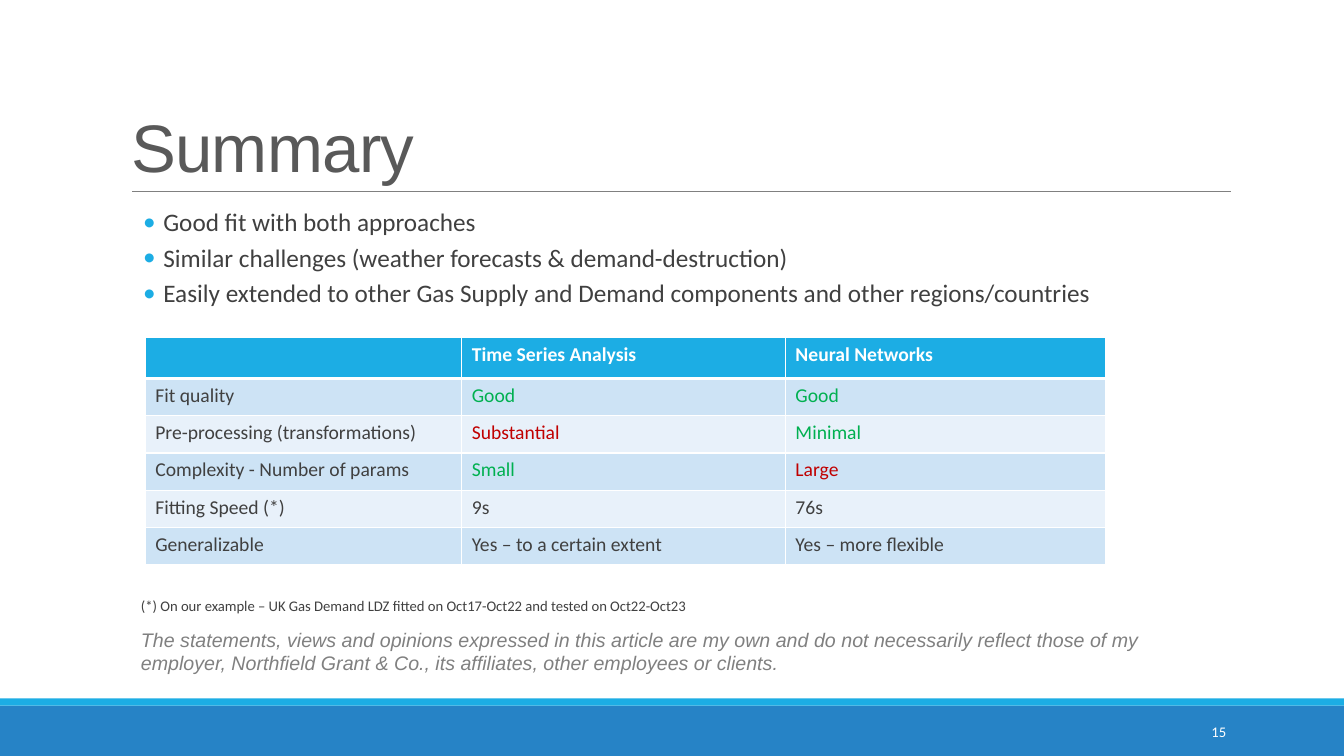
from lxml import etree
from pptx import Presentation
from pptx import util as u
from pptx.dml.color import RGBColor
from pptx.enum import shapes, text
from pptx.oxml.ns import qn

HUES = {
    "white": "FFFFFF", "sky": "1CADE4", "blue": "2683C6", "rule": "808080",
    "title": "595959", "ink": "404040", "good": "00B050", "bad": "C00000",
    "odd": "CDE3F5", "even": "E8F1FA",
}
POINTS = [
    "Good fit with both approaches",
    "Similar challenges (weather forecasts & demand-destruction)",
    "Easily extended to other Gas Supply and Demand components and other regions/countries",
]
ROWS = [
    ["", "Time Series Analysis", "Neural Networks"],
    ["Fit quality", "Good", "Good"],
    ["Pre-processing (transformations)", "Substantial", "Minimal"],
    ["Complexity - Number of params", "Small", "Large"],
    ["Fitting Speed (*)", "9s", "76s"],
    ["Generalizable", "Yes – to a certain extent", "Yes – more flexible"],
]
RATING = {"Good": "good", "Minimal": "good", "Small": "good",
          "Substantial": "bad", "Large": "bad"}
NOTE = "(*) On our example – UK Gas Demand LDZ fitted on Oct17-Oct22 and tested on Oct22-Oct23"
CLAIM = ("The statements, views and opinions expressed in this article are my own and do not "
         "necessarily reflect those of my employer, Northfield Grant & Co., its affiliates, "
         "other employees or clients.")


def rgb(hue):
    return RGBColor.from_string(HUES[hue])


def apply(item, style):
    for name, value in style.items():
        setattr(item, name, value)


def sub(parent, tag, **attrs):
    return etree.SubElement(parent, qn(tag), attrs)


class Deck:
    def __init__(self):
        self.prs = Presentation()
        apply(self.prs, {"slide_width": u.Inches(13.33), "slide_height": u.Inches(7.5)})
        self.slide = self.prs.slides.add_slide(self.prs.slide_layouts[1])
        self.shapes = self.slide.shapes

    def add_words(self, para, words, size, hue, face="Calibri", **style):
        run = para.add_run()
        run.text = words
        apply(run.font, {"size": u.Pt(size), "name": face, **style})
        run.font.color.rgb = rgb(hue)
        return run

    def place(self, shape, *box):
        apply(shape, dict(zip(("left", "top", "width", "height"), map(u.Inches, box))))

    def band(self, top, high, hue):
        bar = self.shapes.add_shape(shapes.MSO_SHAPE.RECTANGLE, 0, u.Inches(top),
                                    self.prs.slide_width, u.Inches(high))
        bar.shadow.inherit = False
        bar.fill.solid()
        bar.fill.fore_color.rgb = rgb(hue)
        bar.line.fill.background()

    def rule(self, left, right, top):
        line = self.shapes.add_connector(shapes.MSO_CONNECTOR.STRAIGHT,
                                         *map(u.Inches, (left, top, right, top)))
        line.line.color.rgb = rgb("rule")
        line.line.width = u.Pt(0.5)
        sub(line._element.spPr, "a:effectLst")

    def title(self, words):
        head = self.shapes.title
        self.place(head, 1.2, 0.31, 11, 1.59)
        apply(head.text_frame, {"vertical_anchor": text.MSO_ANCHOR.BOTTOM,
                                "auto_size": text.MSO_AUTO_SIZE.NONE})
        para = head.text_frame.paragraphs[0]
        apply(para, {"alignment": text.PP_ALIGN.LEFT, "line_spacing": 0.85})
        run = self.add_words(para, words, 48, "title", "Arial")
        run.font._element.set("spc", "-50")

    def bullets(self, items):
        body = self.slide.placeholders[1]
        self.place(body, 1.2, 2.03, 10.61, 1.28)
        frame = body.text_frame
        apply(frame, {"margin_left": 0, "margin_right": 0,
                      "auto_size": text.MSO_AUTO_SIZE.NONE})
        for i, words in enumerate(items):
            para = frame.add_paragraph() if i else frame.paragraphs[0]
            apply(para, {"level": 1, "line_spacing": 0.9,
                         "space_before": u.Pt(2), "space_after": u.Pt(4)})
            self.add_words(para, words, 18, "ink")
            props = para._p.get_or_add_pPr()
            props.set("marL", str(u.Inches(0.42)))
            props.set("indent", str(u.Inches(-0.2)))
            sub(sub(props, "a:buClr"), "a:srgbClr", val=HUES["sky"])
            sub(props, "a:buFont", typeface="Calibri")
            sub(props, "a:buChar", char="•")

    def label(self, box, words, size, hue, face="Calibri", align=text.PP_ALIGN.LEFT,
              anchor=text.MSO_ANCHOR.TOP, **style):
        frame = self.shapes.add_textbox(*map(u.Inches, box)).text_frame
        apply(frame, {"word_wrap": True, "vertical_anchor": anchor})
        frame.paragraphs[0].alignment = align
        self.add_words(frame.paragraphs[0], words, size, hue, face, **style)

    def edge(self, cell, head, below):
        """Draw white cell borders, thick between the header and the first row."""
        props = cell._tc.get_or_add_tcPr()
        wide = {"a:lnT": 3 if below else 1, "a:lnB": 3 if head else 1}
        for tag in ("a:lnL", "a:lnR", "a:lnT", "a:lnB"):
            line = sub(props, tag, w=str(u.Pt(wide.get(tag, 1))))
            sub(sub(line, "a:solidFill"), "a:srgbClr", val=HUES["white"])

    def table(self, rows, left, top, widths, high):
        grid = self.shapes.add_table(len(rows), len(widths), *map(
            u.Inches, (left, top, sum(widths), high * len(rows)))).table
        for col, width in zip(grid.columns, widths):
            col.width = u.Inches(width)
        for r, row in enumerate(rows):
            grid.rows[r].height = u.Inches(high)
            for c, words in enumerate(row):
                cell = grid.cell(r, c)
                self.edge(cell, r == 0, r == 1)
                cell.fill.solid()
                cell.fill.fore_color.rgb = rgb("sky" if r == 0 else "odd" if r % 2 else "even")
                if words:
                    hue = RATING.get(words, "ink") if r else "white"
                    para = cell.text_frame.paragraphs[0]
                    self.add_words(para, words, 14, hue, bold=r == 0)


def main():
    deck = Deck()
    deck.band(7, 0.5, "blue")
    deck.band(6.93, 0.07, "sky")
    deck.rule(1.31, 12.21, 1.9)
    deck.title("Summary")
    deck.bullets(POINTS)
    deck.table(ROWS, 1.44, 3.35, (3.14, 3.21, 3.18), 0.37)
    deck.label((1.3, 5.87, 6.67, 0.29), NOTE, 10.5, "ink")
    deck.label((1.3, 6.18, 10.83, 0.57), CLAIM, 14, "rule", "Arial", italic=True)
    deck.label((10.83, 7.06, 1.43, 0.4), "15", 10.5, "white",
               align=text.PP_ALIGN.RIGHT, anchor=text.MSO_ANCHOR.MIDDLE)
    deck.prs.save("out.pptx")


if __name__ == "__main__":
    main()
